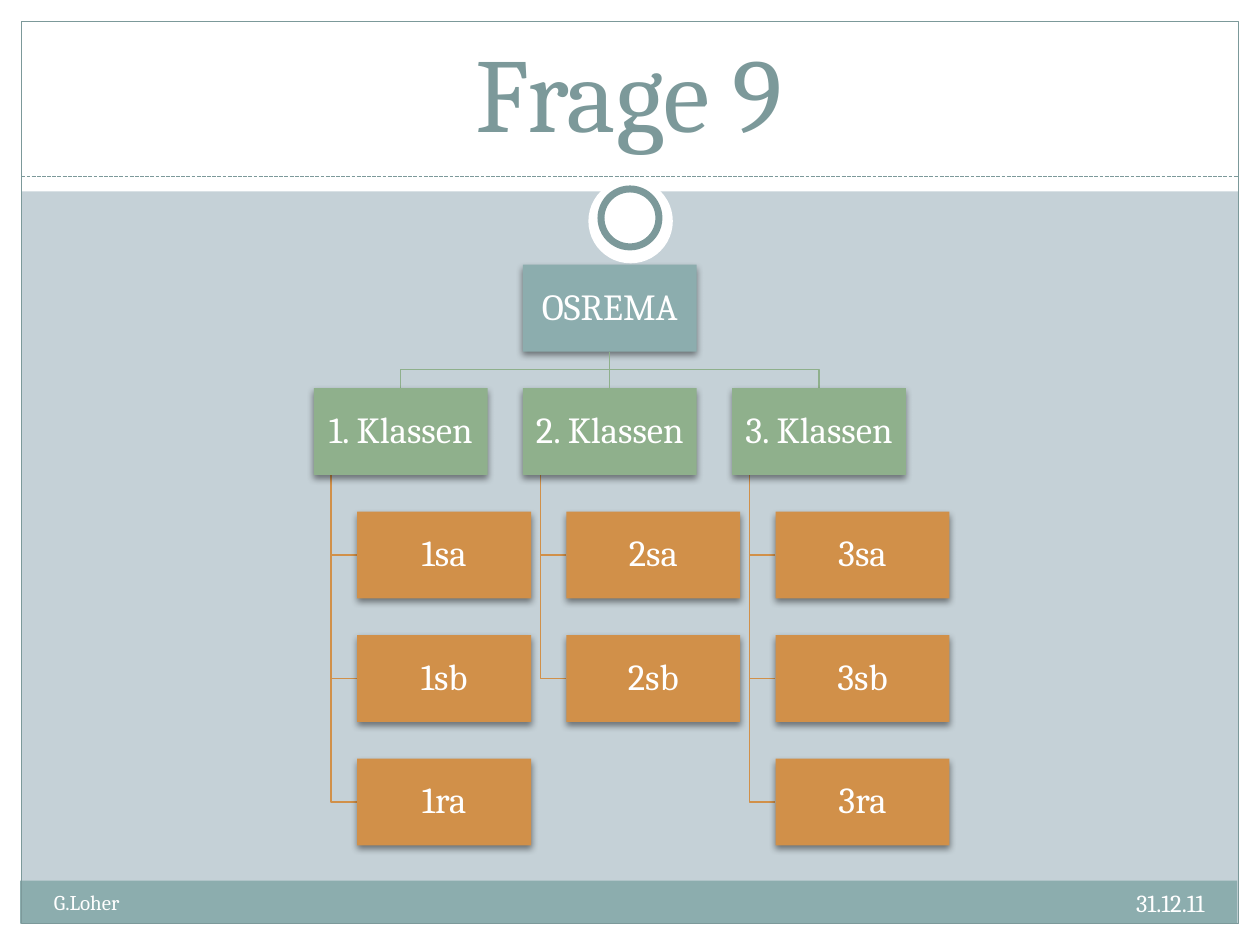
import pptx
import pptx.util
import pptx.dml.color
import pptx.enum.dml
import pptx.enum.shapes
import pptx.enum.text
import pptx.oxml
import pptx.oxml.ns

Inches, Pt = pptx.util.Inches, pptx.util.Pt
Kind = pptx.enum.shapes.MSO_SHAPE
Align = pptx.enum.text.PP_ALIGN
Anchor = pptx.enum.text.MSO_ANCHOR
qn = pptx.oxml.ns.qn

TITLE, AUTHOR, DATE = "Frage 9", "G.Loher", "31.12.11"
ROOT = "OSREMA"
CLASSES = [
    ("1. Klassen", ["1sa", "1sb", "1ra"]),
    ("2. Klassen", ["2sa", "2sb"]),
    ("3. Klassen", ["3sa", "3sb", "3ra"]),
]
THEME = dict(
    font="Cambria", back="C5D1D7", white="FFFFFF", accent="7C999A",
    teal="8CADAE", green="8FB08C", orange="D19049",
    title=60, date=14, author=12, node=21, hair=0.75, ring=4,
)
WHITE_BANDS = [(0, 7.33, 10, 0.17), (0, 0, 10, 1.52),
               (0, 0, 0.17, 7.5), (9.83, 0, 0.17, 7.5)]

# Tree grid, in inches
LEFT, TOP = 2.49, 2.1
WIDE, HIGH = 1.38, 0.69
COL, ROW = 1.66, 0.98
INDENT, TRUNK = WIDE / 4, WIDE / 10
SHADOW = (
    '<a:outerShdw xmlns:a="http://schemas.openxmlformats.org/drawingml/2006/main"'
    ' blurRad="50800" dist="25400" dir="5400000" rotWithShape="0">'
    '<a:srgbClr val="000000"><a:alpha val="45000"/></a:srgbClr></a:outerShdw>'
)


def rgb(name):
    return pptx.dml.color.RGBColor.from_string(THEME[name])


def write(shape, text, size, color="white", align=Align.LEFT,
          anchor=Anchor.TOP, inset=None, spacing=None):
    frame = shape.text_frame
    frame.word_wrap = True
    frame.auto_size = pptx.enum.text.MSO_AUTO_SIZE.NONE
    frame.vertical_anchor = anchor
    if inset is not None:
        frame.margin_left = frame.margin_right = Inches(inset)
        frame.margin_top = frame.margin_bottom = Inches(inset)
    para = frame.paragraphs[0]
    para.alignment, para.line_spacing = align, spacing
    run = para.add_run()
    run.text = text
    run.font.name, run.font.size = THEME["font"], Pt(THEME[size])
    run.font.color.rgb = rgb(color)


def stroke(line, color, width="hair"):
    line.color.rgb, line.width = rgb(color), Pt(THEME[width])


def draw(slide, area, fill=None, line=None, width="hair", kind=Kind.RECTANGLE):
    shape = slide.shapes.add_shape(kind, *map(Inches, area))
    shape.shadow.inherit = False
    if fill:
        shape.fill.solid()
        shape.fill.fore_color.rgb = rgb(fill)
    else:
        shape.fill.background()
    if line:
        stroke(shape.line, line, width)
    else:
        shape.line.fill.background()
    return shape


def link(slide, start, end, color):
    """Draw a straight line without a shadow."""
    line = slide.shapes.add_connector(
        pptx.enum.shapes.MSO_CONNECTOR.STRAIGHT, *map(Inches, start + end))
    stroke(line.line, color)
    line.element.spPr.append(pptx.oxml.parse_xml(
        SHADOW.replace("outerShdw", "effectLst").split(" blurRad")[0] + "/>"))
    return line


def bend(slide, points, color):
    """Draw an open line with right-angled corners."""
    spots = [(Inches(x), Inches(y)) for x, y in points]
    build = slide.shapes.build_freeform(*spots[0])
    build.add_line_segments(spots[1:], close=False)
    shape = build.convert_to_shape()
    shape.shadow.inherit = False
    shape.fill.background()
    stroke(shape.line, color)


def node(slide, text, x, y, fill):
    box = draw(slide, (x, y, WIDE, HIGH), fill)
    box.element.spPr.find(qn("a:effectLst")).append(pptx.oxml.parse_xml(SHADOW))
    write(box, text, "node", align=Align.CENTER, anchor=Anchor.MIDDLE,
          inset=0.01, spacing=0.9)
    return box


def frame(slide):
    slide.background.fill.solid()
    slide.background.fill.fore_color.rgb = rgb("back")
    for band in WHITE_BANDS:
        draw(slide, band, "white")
    draw(slide, (0.16, 6.99, 9.66, 0.34), "teal")
    draw(slide, (0.17, 0.17, 9.66, 7.16), line="accent")
    rule = link(slide, (0.17, 1.4), (9.83, 1.4), "accent")
    rule.line.dash_style = pptx.enum.dml.MSO_LINE.SQUARE_DOT
    draw(slide, (4.67, 1.42, 0.67, 0.67), "white", kind=Kind.OVAL)
    draw(slide, (4.77, 1.5, 0.46, 0.46), "white", "accent", "ring", Kind.OVAL)


def label(slide, area, text, size, align):
    box = slide.shapes.add_textbox(*map(Inches, area))
    write(box, text, size, align=align)


def heading(slide):
    title = slide.shapes.title
    title.left, title.top = Inches(0.33), Inches(0.25)
    title.width, title.height = Inches(9.33), Inches(1.02)
    write(title, TITLE, "title", "accent", Align.CENTER, Anchor.BOTTOM)
    slide.shapes.element.append(title.element)  # in front of the white band


def tree(slide):
    mid = len(CLASSES) // 2
    hub = LEFT + mid * COL + WIDE / 2
    level = TOP + ROW
    turn = (TOP + HIGH + level) / 2
    for i, (_, leaves) in enumerate(CLASSES):
        x = LEFT + i * COL
        for j in range(len(leaves)):
            y = level + (j + 1) * ROW + HIGH / 2
            bend(slide, [(x + TRUNK, level + HIGH), (x + TRUNK, y),
                         (x + INDENT, y)], "orange")
        if i != mid:
            end = x + WIDE / 2
            bend(slide, [(hub, TOP + HIGH), (hub, turn), (end, turn),
                         (end, level)], "green")

    root = node(slide, ROOT, LEFT + mid * COL, TOP, "teal")
    for i, (name, leaves) in enumerate(CLASSES):
        x = LEFT + i * COL
        head = node(slide, name, x, level, "green")
        if i == mid:
            stem = link(slide, (hub, TOP + HIGH), (hub, level), "green")
            stem.begin_connect(root, 2)
            stem.end_connect(head, 0)
        for j, leaf in enumerate(leaves):
            node(slide, leaf, x + INDENT, level + (j + 1) * ROW, "orange")


def main():
    deck = pptx.Presentation()
    deck.slide_width, deck.slide_height = Inches(10), Inches(7.5)
    slide = deck.slides.add_slide(deck.slide_layouts[5])
    frame(slide)
    heading(slide)
    label(slide, (6.33, 7, 3.33, 0.4), DATE, "date", Align.RIGHT)
    label(slide, (0.33, 7.01, 3.92, 0.4), AUTHOR, "author", Align.LEFT)
    tree(slide)
    deck.save("out.pptx")


if __name__ == "__main__":
    main()
